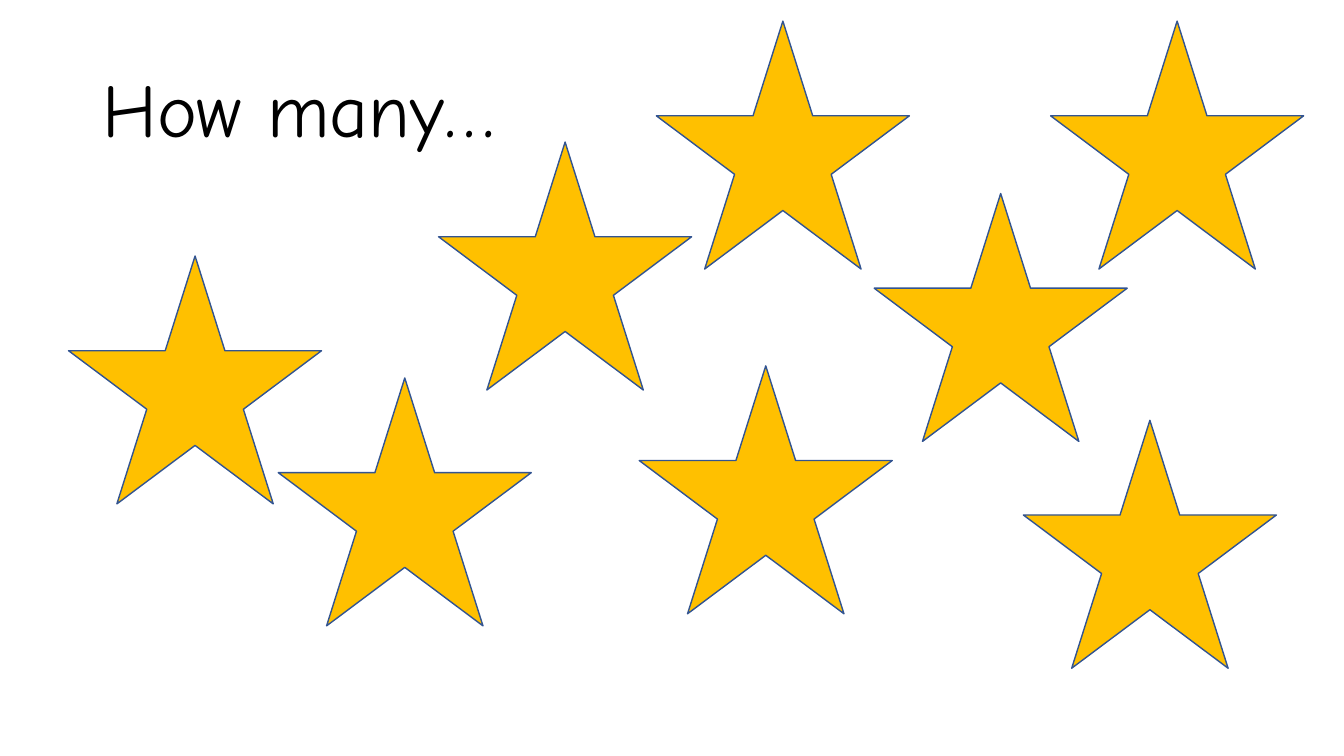
from pptx import Presentation
from pptx import util as u
from pptx.dml.color import RGBColor
from pptx.enum import shapes, text

WHITE = RGBColor(0xFF, 0xFF, 0xFF)
BLACK = RGBColor(0x00, 0x00, 0x00)
GOLD = RGBColor(0xFF, 0xC0, 0x00)
NAVY = RGBColor(0x32, 0x54, 0x91)

STAR_WIDTH, STAR_HEIGHT = 2.51, 2.46
STAR_CORNERS = [
    (2.76, 3.75), (8.67, 1.92), (6.34, 3.63), (4.35, 1.41),
    (6.51, 0.21), (0.68, 2.54), (10.42, 0.21), (10.15, 4.17),
]


def place_title(page, left, top, width, height):
    title = page.shapes.title
    title.left, title.top = u.Inches(left), u.Inches(top)
    title.width, title.height = u.Inches(width), u.Inches(height)
    title.fill.solid()
    title.fill.fore_color.rgb = WHITE
    frame = title.text_frame
    frame.word_wrap = True
    frame.vertical_anchor = text.MSO_ANCHOR.MIDDLE
    para = frame.paragraphs[0]
    para.alignment = text.PP_ALIGN.LEFT
    para.line_spacing = 0.9
    span = para.add_run()
    span.text = "How many…"
    span.font.name = "Comic Neue"
    span.font.size = u.Pt(54)
    span.font.color.rgb = BLACK


def place_stars(page, left, top):
    for across, down in STAR_CORNERS:
        star = page.shapes.add_shape(
            shapes.MSO_SHAPE.STAR_5_POINT,
            u.Inches(left + across), u.Inches(top + down),
            u.Inches(STAR_WIDTH), u.Inches(STAR_HEIGHT))
        star.shadow.inherit = False
        star.fill.solid()
        star.fill.fore_color.rgb = GOLD
        star.line.color.rgb = NAVY
        star.line.width = u.Pt(1)


def main():
    deck = Presentation()
    deck.slide_width, deck.slide_height = u.Inches(13.33), u.Inches(7.5)
    page = deck.slides.add_slide(deck.slide_layouts.get_by_name("Title Only"))
    page.background.fill.solid()
    page.background.fill.fore_color.rgb = WHITE
    place_title(page, 0.92, 0.4, 11.5, 1.45)
    place_stars(page, 0, 0)
    deck.save("out.pptx")


if __name__ == "__main__":
    main()
